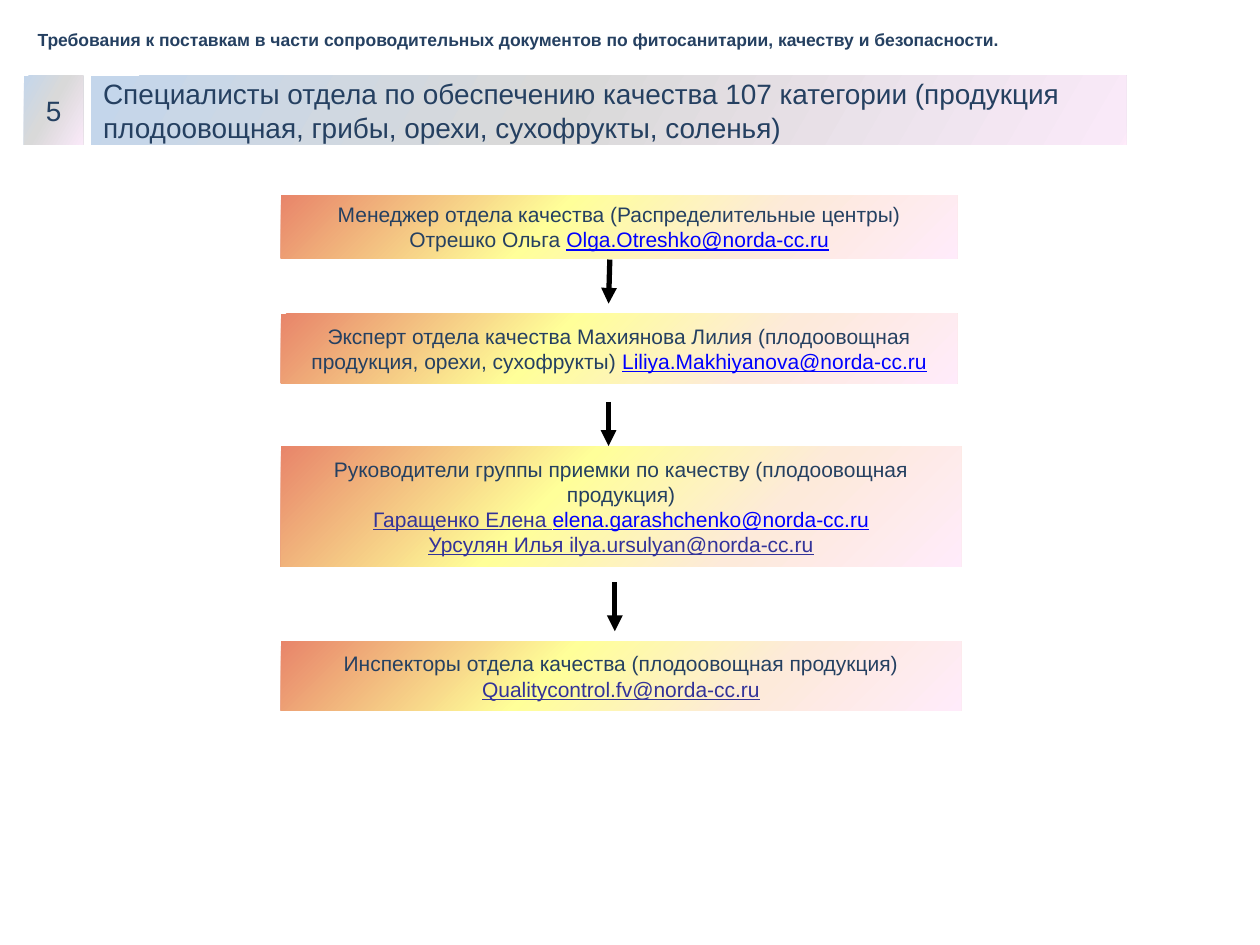
from dataclasses import dataclass

from lxml import etree
from pptx import Presentation
from pptx.dml.color import RGBColor
from pptx.enum.shapes import MSO_CONNECTOR, MSO_SHAPE
from pptx.enum.text import MSO_ANCHOR, PP_ALIGN
from pptx.oxml.ns import qn
from pptx.util import Inches, Pt

STRAIGHT = MSO_CONNECTOR.STRAIGHT
RECTANGLE = MSO_SHAPE.RECTANGLE
MIDDLE = MSO_ANCHOR.MIDDLE
LEFT, CENTER = PP_ALIGN.LEFT, PP_ALIGN.CENTER


@dataclass(frozen=True)
class Gradient:
    stops: tuple[tuple[int, str], ...]
    clockwise_angle: int


@dataclass(frozen=True)
class Theme:
    font: str = "Arial"
    ink: str = "254061"
    link: str = "0000FF"
    contact: str = "333399"
    arrow: str = "000000"
    caption_size: int = 10
    heading_size: int = 16
    body_size: int = 12
    arrow_width: int = 3
    heading_fill: Gradient = Gradient(
        ((0, "C4D6EB"), (45, "D9D9D9"), (99, "F9E9F8"), (100, "FFEBFA")), 30)
    role_fill: Gradient = Gradient(
        ((0, "E8856A"), (40, "FFFF99"), (70, "FDEADA"), (100, "FFEBFA")), 45)


THEME = Theme()


@dataclass(frozen=True)
class Span:
    text: str
    color: str = THEME.ink
    underline: bool = False
    bold: bool = False


@dataclass(frozen=True)
class Box:
    left: float
    top: float
    width: float
    height: float


@dataclass(frozen=True)
class Role:
    box: Box
    lines: tuple[tuple[Span, ...], ...]
    inset: float = 0.07


@dataclass(frozen=True)
class Arrow:
    start: tuple[float, float]
    end: tuple[float, float]


def link(text: str) -> Span:
    return Span(text, THEME.link, underline=True)


def contact(text: str) -> Span:
    return Span(text, THEME.contact, underline=True)


CAPTION = Span("Требования к поставкам в части сопроводительных документов "
               "по фитосанитарии, качеству и безопасности.", bold=True)
HEADING = Span("Специалисты отдела по обеспечению качества 107 категории "
               "(продукция плодоовощная, грибы, орехи, сухофрукты, соленья)")

ROLE_LEFT = 2.23
ROLES = (
    Role(Box(ROLE_LEFT, 1.55, 5.37, 0.5), (
        (Span("Менеджер отдела качества (Распределительные центры)"),),
        (Span("Отрешко Ольга "), link("Olga.Otreshko@norda-cc.ru")),
    ), inset=0.05),
    Role(Box(ROLE_LEFT, 2.49, 5.37, 0.55), (
        (Span("Эксперт отдела качества Махиянова Лилия "
              "(плодоовощная продукция, орехи, сухофрукты) "),
         link("Liliya.Makhiyanova@norda-cc.ru")),
    )),
    Role(Box(ROLE_LEFT, 3.54, 5.4, 0.96), (
        (Span("Руководители группы приемки по качеству (плодоовощная продукция)"),),
        (contact("Гаращенко Елена "), link("elena.garashchenko@norda-cc.ru")),
        (contact("Урсулян Илья ilya.ursulyan@norda-cc.ru"),),
    )),
    Role(Box(ROLE_LEFT, 5.09, 5.4, 0.55), (
        (Span("Инспекторы отдела качества (плодоовощная продукция)"),),
        (contact("Qualitycontrol.fv@norda-cc.ru"),),
    )),
)
ARROWS = (
    Arrow((4.84, 2.06), (4.83, 2.41)),
    Arrow((4.83, 3.19), (4.83, 3.54)),
    Arrow((4.88, 4.62), (4.88, 5.01)),
)


def place(box: Box) -> tuple[Inches, ...]:
    return tuple(Inches(v) for v in (box.left, box.top, box.width, box.height))


def write(frame, lines: tuple[tuple[Span, ...], ...], size: int, align) -> None:
    for index, spans in enumerate(lines):
        paragraph = frame.add_paragraph() if index else frame.paragraphs[0]
        paragraph.alignment = align
        for span in spans:
            run = paragraph.add_run()
            run.text = span.text
            font = run.font
            font.name, font.size = THEME.font, Pt(size)
            font.bold, font.underline = span.bold, span.underline
            font.color.rgb = RGBColor.from_string(span.color)


def paint(shape, gradient: Gradient) -> None:
    """Fill the shape with a gradient of any number of stops."""
    shape.fill.gradient()
    shape.fill.gradient_angle = 360 - gradient.clockwise_angle
    stops = shape.element.spPr.find(qn("a:gradFill")).find(qn("a:gsLst"))
    for old_stop in list(stops):
        stops.remove(old_stop)
    for percent, color in gradient.stops:
        stop = etree.SubElement(stops, qn("a:gs"), pos=str(percent * 1000))
        etree.SubElement(stop, qn("a:srgbClr"), val=color)


def add_panel(slide, box: Box, gradient: Gradient,
              lines: tuple[tuple[Span, ...], ...], size: int,
              align=CENTER, inset: float = 0.05, wrap: bool = True) -> None:
    panel = slide.shapes.add_shape(RECTANGLE, *place(box))
    panel.shadow.inherit = False
    panel.line.fill.background()
    paint(panel, gradient)
    frame = panel.text_frame
    frame.word_wrap = wrap
    frame.vertical_anchor = MIDDLE
    frame.margin_left = frame.margin_right = Inches(0.1)
    frame.margin_top = frame.margin_bottom = Inches(inset)
    write(frame, lines, size, align)


def add_caption(slide) -> None:
    caption = slide.shapes.add_textbox(*place(Box(0.2, 0.23, 7.8, 0.17)))
    frame = caption.text_frame
    frame.word_wrap = True
    frame.margin_left = Inches(0.1)
    frame.margin_top = frame.margin_right = frame.margin_bottom = 0
    write(frame, ((CAPTION,),), THEME.caption_size, LEFT)


def add_arrow(slide, arrow: Arrow) -> None:
    ends = (Inches(v) for v in (*arrow.start, *arrow.end))
    connector = slide.shapes.add_connector(STRAIGHT, *ends)
    connector.line.width = Pt(THEME.arrow_width)
    connector.line.color.rgb = RGBColor.from_string(THEME.arrow)
    etree.SubElement(connector.line._get_or_add_ln(), qn("a:tailEnd"), type="triangle")
    etree.SubElement(connector.element.spPr, qn("a:effectLst"))


def main() -> None:
    deck = Presentation()
    deck.slide_width, deck.slide_height = Inches(10), Inches(7.5)
    slide = deck.slides.add_slide(deck.slide_layouts[6])
    add_caption(slide)
    add_panel(slide, Box(0.19, 0.6, 0.47, 0.55), THEME.heading_fill,
              ((Span("5"),),), THEME.heading_size, wrap=False)
    add_panel(slide, Box(0.72, 0.6, 8.22, 0.55), THEME.heading_fill,
              ((HEADING,),), THEME.heading_size, align=LEFT)
    for role in ROLES:
        add_panel(slide, role.box, THEME.role_fill, role.lines,
                  THEME.body_size, inset=role.inset)
    for arrow in ARROWS:
        add_arrow(slide, arrow)
    deck.save("out.pptx")


if __name__ == "__main__":
    main()
